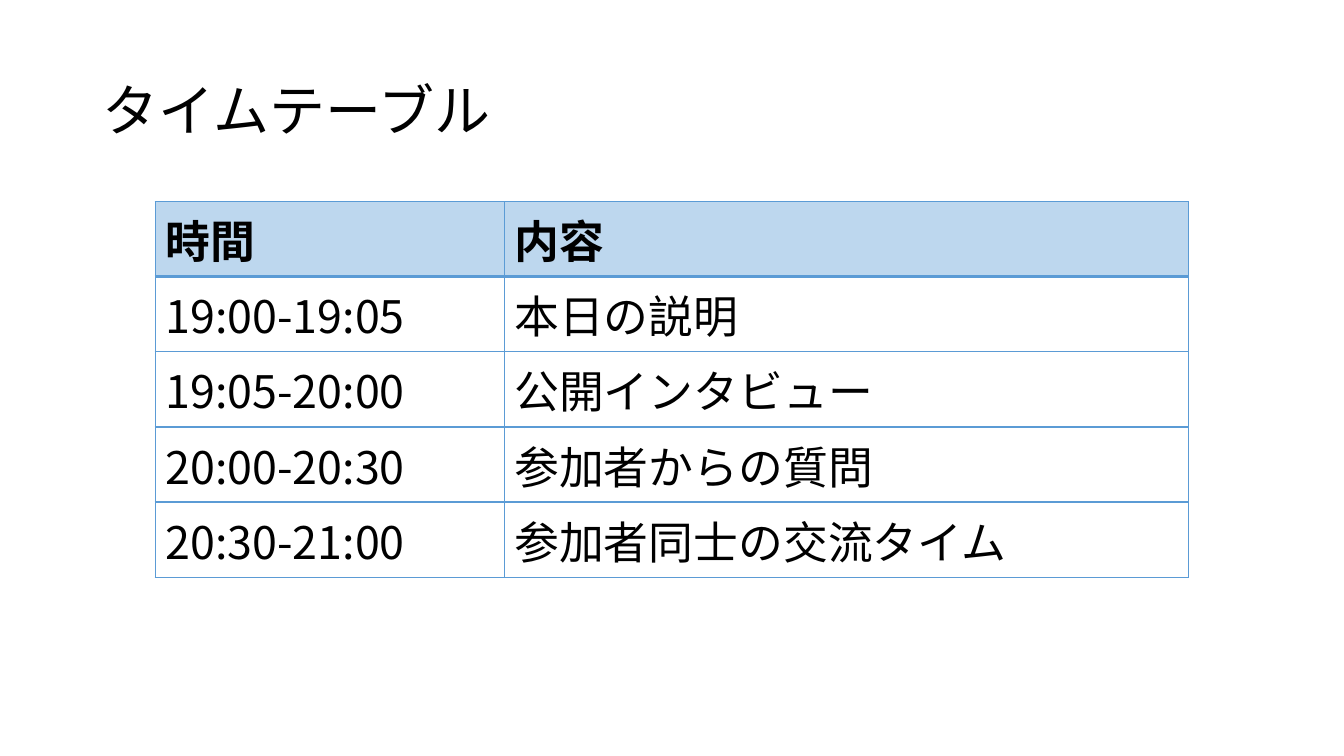
"""Build the event timetable slide."""
from lxml.etree import SubElement
from pptx import Presentation
from pptx.dml.color import RGBColor
from pptx.enum.text import MSO_ANCHOR, PP_ALIGN
from pptx.oxml.ns import qn
from pptx.util import Inches, Pt

TITLE = "タイムテーブル"
ROWS = [
    ("時間", "内容"),
    ("19:00-19:05", "本日の説明"),
    ("19:05-20:00", "公開インタビュー"),
    ("20:00-20:30", "参加者からの質問"),
    ("20:30-21:00", "参加者同士の交流タイム"),
]
COL_WIDTHS = (3.46, 6.79)
ROW_HEIGHT = 0.74
TABLE_LEFT, TABLE_TOP = 1.54, 2
FONT = "Noto Sans CJK JP"
BLACK = RGBColor(0x00, 0x00, 0x00)
BLUE = RGBColor(0x5B, 0x9B, 0xD5)
LIGHT_BLUE = RGBColor(0xBD, 0xD7, 0xEE)
TITLE_FORMAT = {"size": Pt(40), "name": FONT, "bold": False}
CELL_FORMAT = {"size": Pt(32), "name": FONT}


def write(tf, text, fmt):
    p = tf.paragraphs[0]
    p.alignment = PP_ALIGN.LEFT
    r = p.add_run()
    r.text = text
    for name, value in fmt.items():
        setattr(r.font, name, value)
    r.font.color.rgb = BLACK
    SubElement(r.font._element, qn("a:ea"), typeface=FONT)
    return p


def add_borders(cell, widths):
    tc_pr = cell._tc.get_or_add_tcPr()
    for side, width in widths.items():
        ln = SubElement(tc_pr, qn(f"a:ln{side}"), w=str(Pt(width)))
        fill = SubElement(ln, qn("a:solidFill"))
        SubElement(fill, qn("a:srgbClr"), val=str(BLUE))


def add_title(s):
    sp = s.shapes.title
    sp.left, sp.top, sp.width, sp.height = map(Inches, (0.92, 0.4, 11.5, 1.45))
    sp.text_frame.vertical_anchor = MSO_ANCHOR.MIDDLE
    write(sp.text_frame, TITLE, TITLE_FORMAT).line_spacing = 0.9


def add_timetable(s):
    table = s.shapes.add_table(
        len(ROWS), len(COL_WIDTHS), Inches(TABLE_LEFT), Inches(TABLE_TOP),
        Inches(sum(COL_WIDTHS)), Inches(ROW_HEIGHT * len(ROWS))).table
    table.horz_banding = False
    for col, width in zip(table.columns, COL_WIDTHS):
        col.width = Inches(width)
    for i, texts in enumerate(ROWS):
        table.rows[i].height = Inches(ROW_HEIGHT)
        header = i == 0
        borders = {"L": 1, "R": 1, "T": 2 if i == 1 else 1, "B": 2 if header else 1}
        for j, text in enumerate(texts):
            cell = table.cell(i, j)
            write(cell.text_frame, text, {**CELL_FORMAT, "bold": header})
            add_borders(cell, borders)
            if header:
                cell.fill.solid()
                cell.fill.fore_color.rgb = LIGHT_BLUE
            else:
                cell.fill.background()


def main():
    prs = Presentation()
    prs.slide_width, prs.slide_height = Inches(13.33), Inches(7.5)
    s = prs.slides.add_slide(prs.slide_layouts[5])
    add_title(s)
    add_timetable(s)
    prs.save("out.pptx")


if __name__ == "__main__":
    main()
